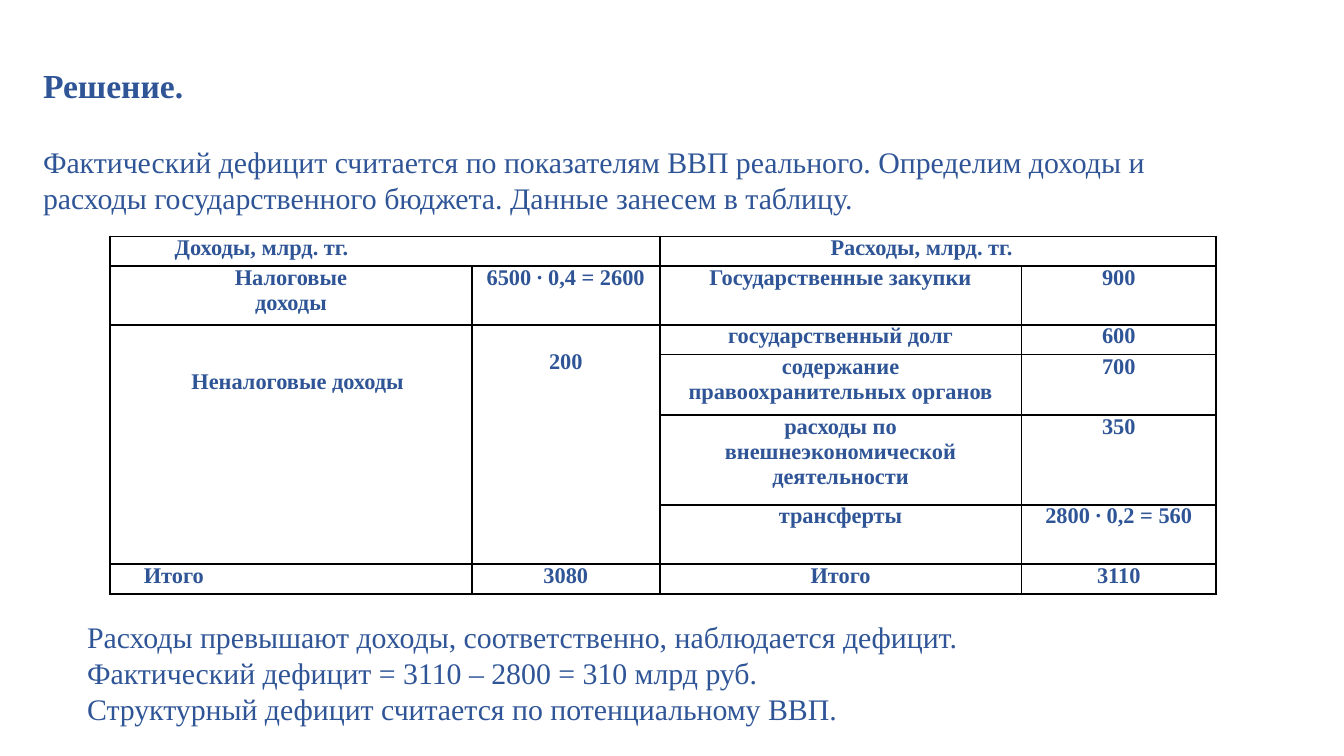
from dataclasses import dataclass

import pptx
import pptx.dml.color
import pptx.enum.text
import pptx.oxml
import pptx.oxml.ns
import pptx.util

Inches = pptx.util.Inches
Pt = pptx.util.Pt
ALIGN = pptx.enum.text.PP_ALIGN
ANCHOR = pptx.enum.text.MSO_ANCHOR


@dataclass(frozen=True)
class Theme:
    font: str = "Times New Roman"
    text: str = "2F5597"
    border: str = "000000"
    border_width: float = 1
    heading: float = 18
    body: float = 16
    cell: float = 12


THEME = Theme()

HEADING = "Решение."
LEAD = ("Фактический дефицит считается по показателям ВВП реального. Определим доходы и "
        "расходы государственного бюджета. Данные занесем в таблицу.")
CONCLUSIONS = [
    "Расходы превышают доходы, соответственно, наблюдается дефицит.",
    "Фактический дефицит = 3110 – 2800 = 310 млрд руб.",
    "Структурный дефицит считается по потенциальному ВВП.",
]

COLUMN_WIDTHS = [2.69, 1.4, 2.69, 1.45]
# Side margins of each column
COLUMN_MARGINS = [0.03, 0.08, 0.11, 0.14]
# Row height in inches, line spacing in points, cell texts
BUDGET_ROWS = [
    (0.22, 12.7, ["Доходы, млрд. тг.", "", "Расходы, млрд. тг.", ""]),
    (0.44, 13.2, ["Налоговые\nдоходы", "6500 ∙ 0,4 = 2600", "Государственные закупки", "900"]),
    (0.22, 12.7, ["Неналоговые доходы", "200", "государственный долг", "600"]),
    (0.45, 13.2, ["", "", "содержание\nправоохранительных органов", "700"]),
    (0.67, 13.2, ["", "", "расходы по внешнеэкономической\nдеятельности", "350"]),
    (0.44, 12.7, ["", "", "трансферты", "2800 ∙ 0,2 = 560"]),
    (0.22, 12.7, ["Итого", "3080", "Итого", "3110"]),
]
# First and last cell of each merged area
MERGES = [((0, 0), (0, 1)), ((0, 2), (0, 3)), ((2, 0), (5, 0)), ((2, 1), (5, 1))]
# Cells set from the left
LEFT_ALIGNED = {(0, 0), (0, 2), (6, 0)}
# Left and top margins that differ from the rule
LEFT_MARGINS = {(0, 0): 0.48, (0, 2): 1.27, (2, 0): 0.13, (6, 0): 0.25}
TOP_MARGINS = {(2, 0): 0.34, (2, 1): 0.19}


def format_paragraph(paragraph, size, bold=False, align=ALIGN.LEFT):
    paragraph.alignment = align
    for run in paragraph.runs:
        run.font.name = THEME.font
        run.font.size = Pt(size)
        run.font.bold = bold
        run.font.color.rgb = pptx.dml.color.RGBColor.from_string(THEME.text)


def set_borders(cell):
    properties = cell._tc.get_or_add_tcPr()
    for position, side in enumerate(("lnL", "lnR", "lnT", "lnB")):
        line = pptx.oxml.parse_xml(
            f'<a:{side} {pptx.oxml.ns.nsdecls("a")} w="{Pt(THEME.border_width)}">'
            f'<a:solidFill><a:srgbClr val="{THEME.border}"/></a:solidFill></a:{side}>')
        properties.insert(position, line)


def add_heading(slide, left, top, width, height):
    title = slide.shapes.title
    title.left, title.top = Inches(left), Inches(top)
    title.width, title.height = Inches(width), Inches(height)
    text_frame = title.text_frame
    text_frame.auto_size = pptx.enum.text.MSO_AUTO_SIZE.NONE
    text_frame.vertical_anchor = ANCHOR.TOP
    text_frame.margin_top = Inches(0.06)
    text_frame.text = f"{HEADING}\n{LEAD}"
    heading, lead = text_frame.paragraphs
    format_paragraph(heading, THEME.heading, bold=True)
    heading.space_after = Pt(21)
    format_paragraph(lead, THEME.body)


def add_budget_table(slide, left, top, width, height):
    table = slide.shapes.add_table(
        len(BUDGET_ROWS), len(COLUMN_WIDTHS),
        Inches(left), Inches(top), Inches(width), Inches(height)).table
    table.first_row = table.horz_banding = False
    for column, column_width in zip(table.columns, COLUMN_WIDTHS):
        column.width = Inches(column_width)

    for row, (row_height, line_spacing, texts) in enumerate(BUDGET_ROWS):
        table.rows[row].height = Inches(row_height)
        for column, text in enumerate(texts):
            place = (row, column)
            margin = COLUMN_MARGINS[column]
            cell = table.cell(row, column)
            cell.margin_left = Inches(LEFT_MARGINS.get(place, margin))
            cell.margin_right = Inches(margin)
            cell.margin_top = Inches(TOP_MARGINS.get(place, 0))
            cell.margin_bottom = 0
            cell.fill.background()
            set_borders(cell)
            cell.text_frame.text = text
            align = ALIGN.LEFT if place in LEFT_ALIGNED else ALIGN.CENTER
            for paragraph in cell.text_frame.paragraphs:
                format_paragraph(paragraph, THEME.cell, bold=True, align=align)
                paragraph.line_spacing = Pt(line_spacing)

    for first, last in MERGES:
        table.cell(*first).merge(table.cell(*last))


def add_conclusions(slide, left, top, width, height):
    box = slide.shapes.add_textbox(Inches(left), Inches(top), Inches(width), Inches(height))
    text_frame = box.text_frame
    text_frame.word_wrap = True
    text_frame.vertical_anchor = ANCHOR.MIDDLE
    text_frame.text = "\n".join(CONCLUSIONS)
    for paragraph in text_frame.paragraphs:
        format_paragraph(paragraph, THEME.body)


def main():
    presentation = pptx.Presentation()
    # Widescreen, 16 to 9
    presentation.slide_width = Inches(10)
    presentation.slide_height = Inches(10 * 9 / 16)
    title_only = presentation.slide_layouts.get_by_name("Title Only")
    slide = presentation.slides.add_slide(title_only)

    add_heading(slide, 0.22, 0.42, 9.05, 1.55)
    add_budget_table(slide, 0.82, 1.76, sum(COLUMN_WIDTHS), 2.66)
    add_conclusions(slide, 0.55, 4.55, 9.14, 0.91)
    presentation.save("out.pptx")


if __name__ == "__main__":
    main()
